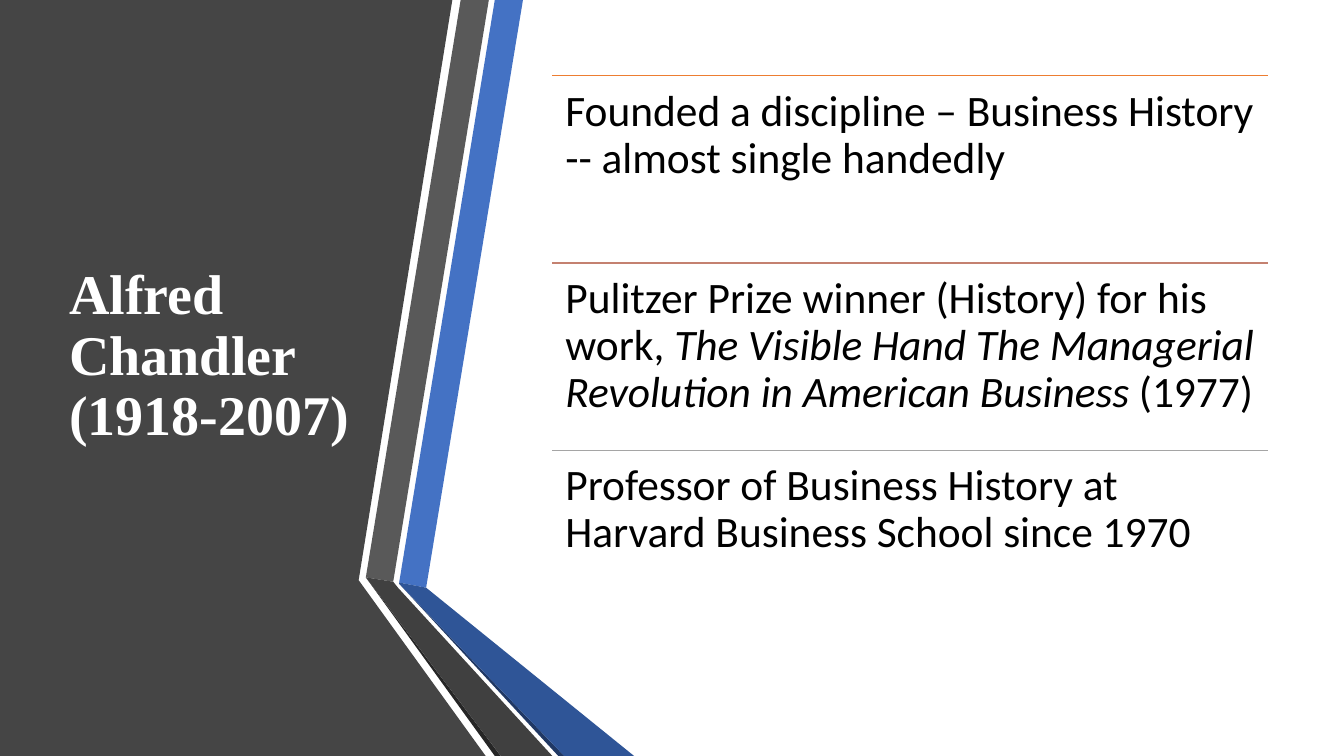
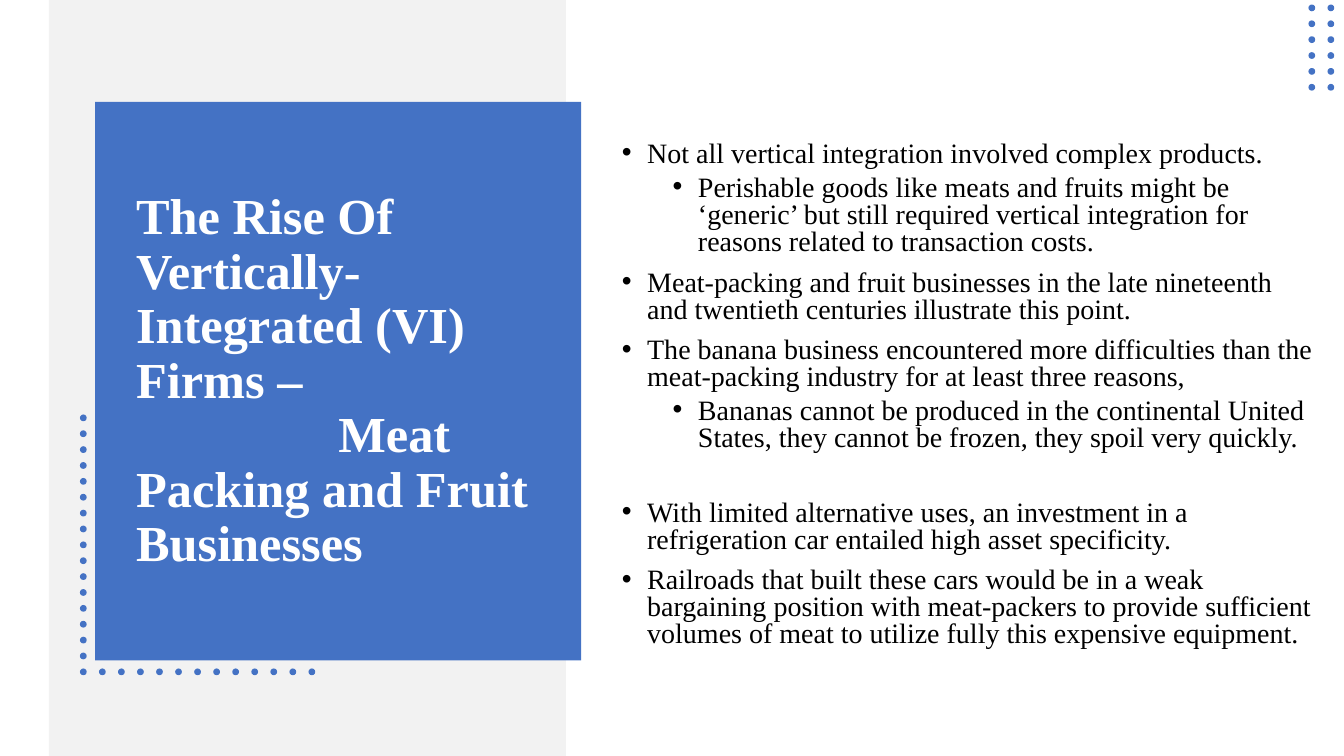
"""Build two slides on business history and vertical integration."""
from lxml import etree
from pptx import Presentation
from pptx.dml.color import RGBColor
from pptx.enum.shapes import MSO_CONNECTOR, MSO_SHAPE
from pptx.enum.text import MSO_ANCHOR
from pptx.oxml.ns import qn
from pptx.util import Cm, Pt

STRAIGHT = MSO_CONNECTOR.STRAIGHT
RECTANGLE, OVAL = MSO_SHAPE.RECTANGLE, MSO_SHAPE.OVAL
TOP, MIDDLE = MSO_ANCHOR.TOP, MSO_ANCHOR.MIDDLE

WHITE = RGBColor(0xFF, 0xFF, 0xFF)
BLACK = RGBColor(0x00, 0x00, 0x00)
BLUE = RGBColor(0x44, 0x72, 0xC4)
DARK_BLUE = RGBColor(0x2F, 0x55, 0x97)
NAVY = RGBColor(0x20, 0x38, 0x64)
PANEL_GRAY = RGBColor(0x45, 0x45, 0x45)
MID_GRAY = RGBColor(0x59, 0x59, 0x59)
CHARCOAL = RGBColor(0x40, 0x40, 0x40)
NEAR_BLACK = RGBColor(0x26, 0x26, 0x26)
PALE_GRAY = RGBColor(0xF2, 0xF2, 0xF2)
ORANGE = RGBColor(0xED, 0x7D, 0x31)
ROSE = RGBColor(0xC4, 0x81, 0x70)
SILVER = RGBColor(0xA5, 0xA5, 0xA5)

SERIF, SANS = "Times New Roman", "Calibri"
SLIDE_WIDTH, SLIDE_HEIGHT = 33.87, 19.05
DOT_SIZE, DOT_ROW_PITCH, DOT_COLUMN_PITCH = 0.17, 0.4, 0.48
BULLET_INDENT = 0.64

RIBBONS = [
    (PANEL_GRAY, [(0, 0), (11.4, 0), (9.04, 14.62), (12.24, 19.05), (0, 19.05)]),
    (BLUE, [(10.06, 14.68), (10.74, 14.81), (13.18, 0), (12.47, 0)]),
    (MID_GRAY, [(12.32, 0), (11.61, 0), (9.22, 14.55), (9.91, 14.66)]),
    (NEAR_BLACK, [(9.22, 14.55), (12.47, 19.05), (12.62, 19.05)]),
    (NAVY, [(10.06, 14.71), (14.07, 19.05), (14.22, 19.05)]),
    (DARK_BLUE, [(10.06, 14.68), (10.06, 14.71), (14.22, 19.05),
                 (15.98, 19.05), (10.74, 14.81)]),
    (CHARCOAL, [(13.92, 19.05), (10.03, 14.81), (9.91, 14.66),
                (9.22, 14.55), (12.62, 19.05)]),
]

ACHIEVEMENTS = [
    (ORANGE, [("Founded a discipline – Business History -- almost single handedly", False)]),
    (ROSE, [("Pulitzer Prize winner (History) for his work, ", False),
            ("The Visible Hand The Managerial Revolution in American Business ", True),
            ("(1977)", False)]),
    (SILVER, [("Professor of Business History at Harvard Business School since 1970", False)]),
]

BULLETS = [
    (0, 10, "Not all vertical integration involved complex products."),
    (1, 5, "Perishable goods like meats and fruits might be ‘generic’ but still "
           "required vertical integration for reasons related to transaction costs."),
    (0, 10, "Meat-packing and fruit businesses in the late nineteenth and twentieth "
            "centuries illustrate this point."),
    (0, 10, "The banana business encountered more difficulties than the meat-packing "
            "industry for at least three reasons,"),
    (1, 5, "Bananas cannot be produced in the continental United States, they cannot "
           "be frozen, they spoil very quickly."),
    (0, 34, "With limited alternative uses, an investment in a refrigeration car "
            "entailed high asset specificity."),
    (0, 10, "Railroads that built these cars would be in a weak bargaining position "
            "with meat-packers to provide sufficient volumes of meat to utilize fully "
            "this expensive equipment."),
]


def paint(shape, color):
    """Give a shape a flat fill without outline or shadow."""
    shape.shadow.inherit = False
    shape.fill.solid()
    shape.fill.fore_color.rgb = color
    shape.line.fill.background()


def add_block(slide, kind, left, top, width, height, color):
    """Add a flat preset shape."""
    shape = slide.shapes.add_shape(kind, Cm(left), Cm(top), Cm(width), Cm(height))
    paint(shape, color)


def add_polygon(slide, points, color):
    """Add a flat closed outline through points in centimetres."""
    start, *others = [(Cm(x), Cm(y)) for x, y in points]
    builder = slide.shapes.build_freeform(*start)
    builder.add_line_segments(others, close=True)
    paint(builder.convert_to_shape(), color)


def add_rule(slide, left, top, width, color):
    """Add a thin horizontal line."""
    line = slide.shapes.add_connector(
        STRAIGHT, Cm(left), Cm(top), Cm(left + width), Cm(top))
    line.line.color.rgb = color
    line.line.width = Pt(1)
    etree.SubElement(line._element.spPr, qn("a:effectLst"))


def add_text_frame(slide, left, top, width, height, anchor):
    """Add a wrapping text box and return its text frame."""
    box = slide.shapes.add_textbox(Cm(left), Cm(top), Cm(width), Cm(height))
    text_frame = box.text_frame
    text_frame.word_wrap = True
    text_frame.vertical_anchor = anchor
    return text_frame


def add_paragraphs(text_frame, texts):
    """Fill a text frame with one paragraph per text."""
    text_frame.text = "\n".join(texts)
    return text_frame.paragraphs


def format_paragraph(paragraph, font_name, size, color, spacing=0.9, bold=False):
    """Set the line spacing of a paragraph and the font of its runs."""
    paragraph.line_spacing = spacing
    for run in paragraph.runs:
        run.font.name = font_name
        run.font.size = Pt(size)
        run.font.color.rgb = color
        run.font.bold = bold


def set_indent(paragraph, margin, first_line):
    """Set the left margin and the first line indent of a paragraph."""
    properties = paragraph._p.get_or_add_pPr()
    properties.set("marL", str(Cm(margin)))
    properties.set("indent", str(Cm(first_line)))
    return properties


def add_title(slide, left, top, width, height, texts, size):
    """Add a bold white title and return its paragraphs."""
    text_frame = add_text_frame(slide, left, top, width, height, MIDDLE)
    paragraphs = add_paragraphs(text_frame, texts)
    for paragraph in paragraphs:
        format_paragraph(paragraph, SERIF, size, WHITE, bold=True)
    return paragraphs


def add_achievement(slide, left, top, width, height, color, pieces):
    """Add a ruled statement whose pieces may be italic."""
    add_rule(slide, left, top, width, color)
    text_frame = add_text_frame(slide, left, top, width, height, TOP)
    text_frame.margin_left = text_frame.margin_right = Cm(0.33)
    text_frame.margin_top = text_frame.margin_bottom = Cm(0.33)
    paragraph = text_frame.paragraphs[0]
    for text, italic in pieces:
        run = paragraph.add_run()
        run.text = text
        run.font.italic = italic
    format_paragraph(paragraph, SANS, 31, BLACK)


def add_bullets(slide, left, top, width, height, bullets):
    """Add a bulleted list of level, space before and text."""
    text_frame = add_text_frame(slide, left, top, width, height, MIDDLE)
    paragraphs = add_paragraphs(text_frame, [text for _, _, text in bullets])
    for paragraph, (level, space_before, _) in zip(paragraphs, bullets):
        format_paragraph(paragraph, SERIF, 20, BLACK, spacing=0.8)
        paragraph.level = level
        paragraph.space_before = Pt(space_before)
        properties = set_indent(
            paragraph, BULLET_INDENT * (1 + 2 * level), -BULLET_INDENT)
        etree.SubElement(properties, qn("a:buFont")).set("typeface", "Arial")
        etree.SubElement(properties, qn("a:buChar")).set("char", "•")


def add_dots(slide, center_x, center_y, columns, rows):
    """Add a grid of dots starting at the given centre."""
    for column in range(columns):
        for row in range(rows):
            left = center_x + column * DOT_COLUMN_PITCH - DOT_SIZE / 2
            top = center_y + row * DOT_ROW_PITCH - DOT_SIZE / 2
            add_block(slide, OVAL, left, top, DOT_SIZE, DOT_SIZE, BLUE)


def build_chandler_slide(slide):
    """Build the slide about the founder of business history."""
    for color, points in RIBBONS:
        add_polygon(slide, points, color)
    add_title(slide, 1.5, 1.91, 7.72, 14.17, ["Alfred Chandler (1918-2007)"], 40)
    height = 4.72
    for index, (color, pieces) in enumerate(ACHIEVEMENTS):
        add_achievement(slide, 13.92, 1.91 + index * height, 18.03, height, color, pieces)


def build_integration_slide(slide):
    """Build the slide about vertically integrated firms."""
    add_block(slide, RECTANGLE, 1.23, 0, 13.03, SLIDE_HEIGHT, PALE_GRAY)
    add_block(slide, RECTANGLE, 2.4, 2.57, 12.25, 14.07, BLUE)
    add_dots(slide, 2.1, 10.53, 1, 17)
    add_dots(slide, 2.1 + DOT_COLUMN_PITCH, 16.93, 12, 1)
    add_dots(slide, 33.06, 0.2, 2, 6)
    title = add_title(slide, 3.18, 3.68, 10.52, 11.89, [
        "The Rise Of Vertically-Integrated (VI) Firms –",
        "Meat Packing and Fruit Businesses"], 36)
    set_indent(title[1], 0, 5.1)
    add_bullets(slide, 15.42, 3.3, 18.06, 13.34, BULLETS)


def main():
    """Create and save the presentation."""
    presentation = Presentation()
    presentation.slide_width = Cm(SLIDE_WIDTH)
    presentation.slide_height = Cm(SLIDE_HEIGHT)
    blank = presentation.slide_layouts[6]
    for build in (build_chandler_slide, build_integration_slide):
        build(presentation.slides.add_slide(blank))
    presentation.save("out.pptx")


if __name__ == "__main__":
    main()
